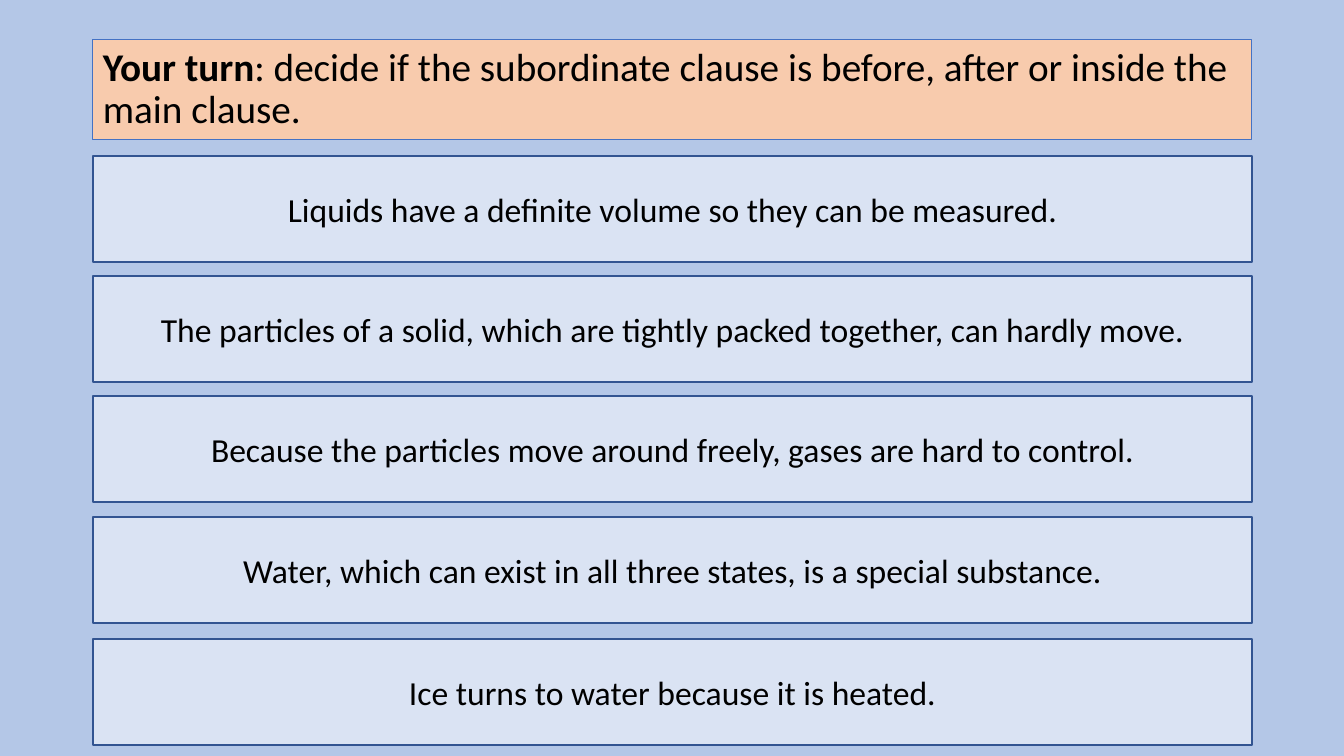
from pptx import Presentation
from pptx import util as u
from pptx.dml.color import RGBColor
from pptx.enum import shapes, text

SKY = RGBColor(0xB4, 0xC7, 0xE7)
PEACH = RGBColor(0xF8, 0xCB, 0xAD)
PALE_BLUE = RGBColor(0xDA, 0xE3, 0xF3)
BLUE = RGBColor(0x44, 0x72, 0xC4)
NAVY = RGBColor(0x32, 0x54, 0x91)
BLACK = RGBColor(0, 0, 0)

LEFT, WIDTH = 93, 1159
SENTENCES = [
    (156, "Liquids have a definite volume so they can be measured."),
    (276, "The particles of a solid, which are tightly packed together, can hardly move."),
    (396, "Because the particles move around freely, gases are hard to control."),
    (517, "Water, which can exist in all three states, is a special substance."),
    (639, "Ice turns to water because it is heated."),
]


def px(length):
    return u.Emu(round(length * 914400 / 100.8))


class Board:
    """Holds the style and the current slide."""

    font = "Calibri"

    def __init__(self, page, background):
        self.page = page
        page.background.fill.solid()
        page.background.fill.fore_color.rgb = background

    def panel(self, top, height, fill, line, weight, size, align):
        """Draw a full-width box and return its styled paragraph."""
        box = self.page.shapes.add_shape(
            shapes.MSO_SHAPE.RECTANGLE, px(LEFT), px(top), px(WIDTH), px(height))
        box.shadow.inherit = False
        box.fill.solid()
        box.fill.fore_color.rgb = fill
        box.line.color.rgb = line
        box.line.width = u.Pt(weight)
        box.text_frame.word_wrap = True
        box.text_frame.vertical_anchor = text.MSO_ANCHOR.MIDDLE
        para = box.text_frame.paragraphs[0]
        para.alignment = align
        para.font.name = self.font
        para.font.size = u.Pt(size)
        para.font.color.rgb = BLACK
        return para

    def heading(self, lead, rest):
        para = self.panel(40, 100, PEACH, BLUE, 0.75, 28, text.PP_ALIGN.LEFT)
        para.line_spacing = 0.9
        for words, bold in ((lead, True), (rest, False)):
            span = para.add_run()
            span.text = words
            span.font.bold = bold

    def sentence(self, top, words):
        para = self.panel(top, 106, PALE_BLUE, NAVY, 1, 24, text.PP_ALIGN.CENTER)
        para.add_run().text = words


def main():
    deck = Presentation()
    deck.slide_width, deck.slide_height = px(1344), px(756)
    board = Board(deck.slides.add_slide(deck.slide_layouts[6]), SKY)

    # Task
    board.heading(
        "Your turn",
        ": decide if the subordinate clause is before, after or inside the main clause.")

    # Sentences to sort
    for top, words in SENTENCES:
        board.sentence(top, words)

    deck.save("out.pptx")


if __name__ == "__main__":
    main()
